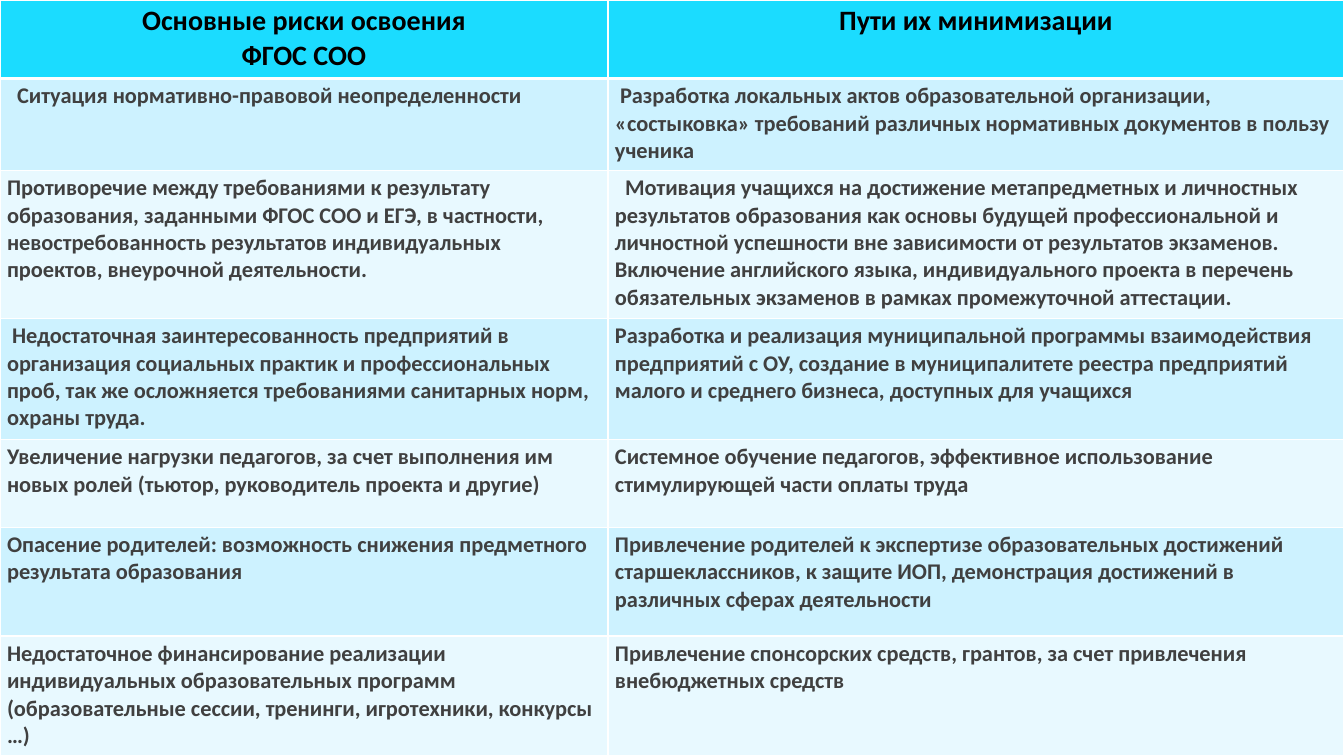
from dataclasses import dataclass

import pptx
import pptx.dml.color
import pptx.enum.text
import pptx.oxml
import pptx.oxml.ns
import pptx.table
import pptx.util
from pptx.util import Inches

HEADER_FILL = "1BDCFF"
BAND_FILLS = ("CDF2FF", "E8F9FF")
BORDER_COLOR = "FFFFFF"
COLUMN_WIDTHS = (6.03, 7.3)


@dataclass(frozen=True)
class Entry:
    text: str
    indent: float = 0  # first line, inches


@dataclass(frozen=True)
class RiskRow:
    height: float
    risk: Entry
    remedy: Entry


@dataclass(frozen=True)
class RowStyle:
    fill: str
    color: str
    size: int
    align: pptx.enum.text.PP_ALIGN
    top: int = 1
    bottom: int = 1


HEADER = RiskRow(0.78, Entry("Основные риски освоения\nФГОС СОО"), Entry("Пути их минимизации"))
RISKS = (
    RiskRow(
        0.91,
        Entry("Ситуация нормативно-правовой неопределенности", 0.1),
        Entry("Разработка локальных актов образовательной организации, «состыковка» "
              "требований различных нормативных документов в пользу ученика", 0.05),
    ),
    RiskRow(
        1.47,
        Entry("Противоречие между требованиями к результату образования, заданными "
              "ФГОС СОО и ЕГЭ, в частности, невостребованность результатов "
              "индивидуальных проектов, внеурочной деятельности."),
        Entry("Мотивация учащихся на достижение метапредметных и личностных результатов "
              "образования как основы будущей профессиональной и личностной успешности "
              "вне зависимости от результатов экзаменов. Включение английского языка, "
              "индивидуального проекта в перечень обязательных экзаменов в рамках "
              "промежуточной аттестации.", 0.1),
    ),
    RiskRow(
        1.2,
        Entry("Недостаточная заинтересованность предприятий в организация социальных "
              "практик и профессиональных проб, так же осложняется требованиями "
              "санитарных норм, охраны труда.", 0.05),
        Entry("Разработка и реализация муниципальной программы взаимодействия "
              "предприятий с ОУ, создание в муниципалитете реестра предприятий малого "
              "и среднего бизнеса, доступных для учащихся"),
    ),
    RiskRow(
        0.87,
        Entry("Увеличение нагрузки педагогов, за счет выполнения им новых ролей "
              "(тьютор, руководитель проекта и другие)"),
        Entry("Системное обучение педагогов, эффективное использование стимулирующей "
              "части оплаты труда"),
    ),
    RiskRow(
        1.08,
        Entry("Опасение родителей: возможность снижения предметного результата "
              "образования"),
        Entry("Привлечение родителей к экспертизе образовательных достижений "
              "старшеклассников, к защите ИОП, демонстрация достижений в различных "
              "сферах деятельности"),
    ),
    RiskRow(
        1.19,
        Entry("Недостаточное финансирование реализации индивидуальных образовательных "
              "программ (образовательные сессии, тренинги, игротехники, конкурсы …)"),
        Entry("Привлечение спонсорских средств, грантов, за счет привлечения "
              "внебюджетных средств"),
    ),
)


def rgb(value: str) -> pptx.dml.color.RGBColor:
    return pptx.dml.color.RGBColor.from_string(value)


def add_borders(cell: pptx.table._Cell, top: int, bottom: int) -> None:
    """Draw the four cell borders; widths are in points."""
    properties = cell._tc.get_or_add_tcPr()
    sides = (("lnL", 1), ("lnR", 1), ("lnT", top), ("lnB", bottom))
    for position, (side, width) in enumerate(sides):
        border = pptx.oxml.parse_xml(
            f'<a:{side} {pptx.oxml.ns.nsdecls("a")} w="{pptx.util.Pt(width)}">'
            f'<a:solidFill><a:srgbClr val="{BORDER_COLOR}"/></a:solidFill></a:{side}>'
        )
        properties.insert(position, border)


def fill_cell(cell: pptx.table._Cell, entry: Entry, style: RowStyle) -> None:
    cell.text = entry.text
    cell.margin_left = cell.margin_right = Inches(0.07)
    cell.margin_top = cell.margin_bottom = Inches(0.04)
    cell.fill.solid()
    cell.fill.fore_color.rgb = rgb(style.fill)
    add_borders(cell, style.top, style.bottom)
    for paragraph in cell.text_frame.paragraphs:
        paragraph.alignment = style.align
        if entry.indent:
            paragraph._p.get_or_add_pPr().set("indent", str(Inches(entry.indent)))
        paragraph.font.name = "Calibri"
        paragraph.font.size = pptx.util.Pt(style.size)
        paragraph.font.bold = True
        paragraph.font.color.rgb = rgb(style.color)


def row_style(index: int) -> RowStyle:
    align = pptx.enum.text.PP_ALIGN
    if index == 0:
        return RowStyle(HEADER_FILL, "000000", 20, align.CENTER, bottom=3)
    fill = BAND_FILLS[(index - 1) % 2]
    return RowStyle(fill, "404040", 16, align.LEFT, top=3 if index == 1 else 1)


def main() -> None:
    presentation = pptx.Presentation()
    presentation.slide_width = Inches(13.33)
    presentation.slide_height = Inches(7.5)
    slide = presentation.slides.add_slide(presentation.slide_layouts[6])

    rows = (HEADER, *RISKS)
    risk_table = slide.shapes.add_table(
        len(rows), len(COLUMN_WIDTHS), 0, 0, Inches(13.33), Inches(7.5)
    ).table
    risk_table.first_row = risk_table.horz_banding = False
    for column, width in zip(risk_table.columns, COLUMN_WIDTHS):
        column.width = Inches(width)
    for index, row in enumerate(rows):
        risk_table.rows[index].height = Inches(row.height)
        for column_index, entry in enumerate((row.risk, row.remedy)):
            fill_cell(risk_table.cell(index, column_index), entry, row_style(index))

    presentation.save("out.pptx")


if __name__ == "__main__":
    main()
